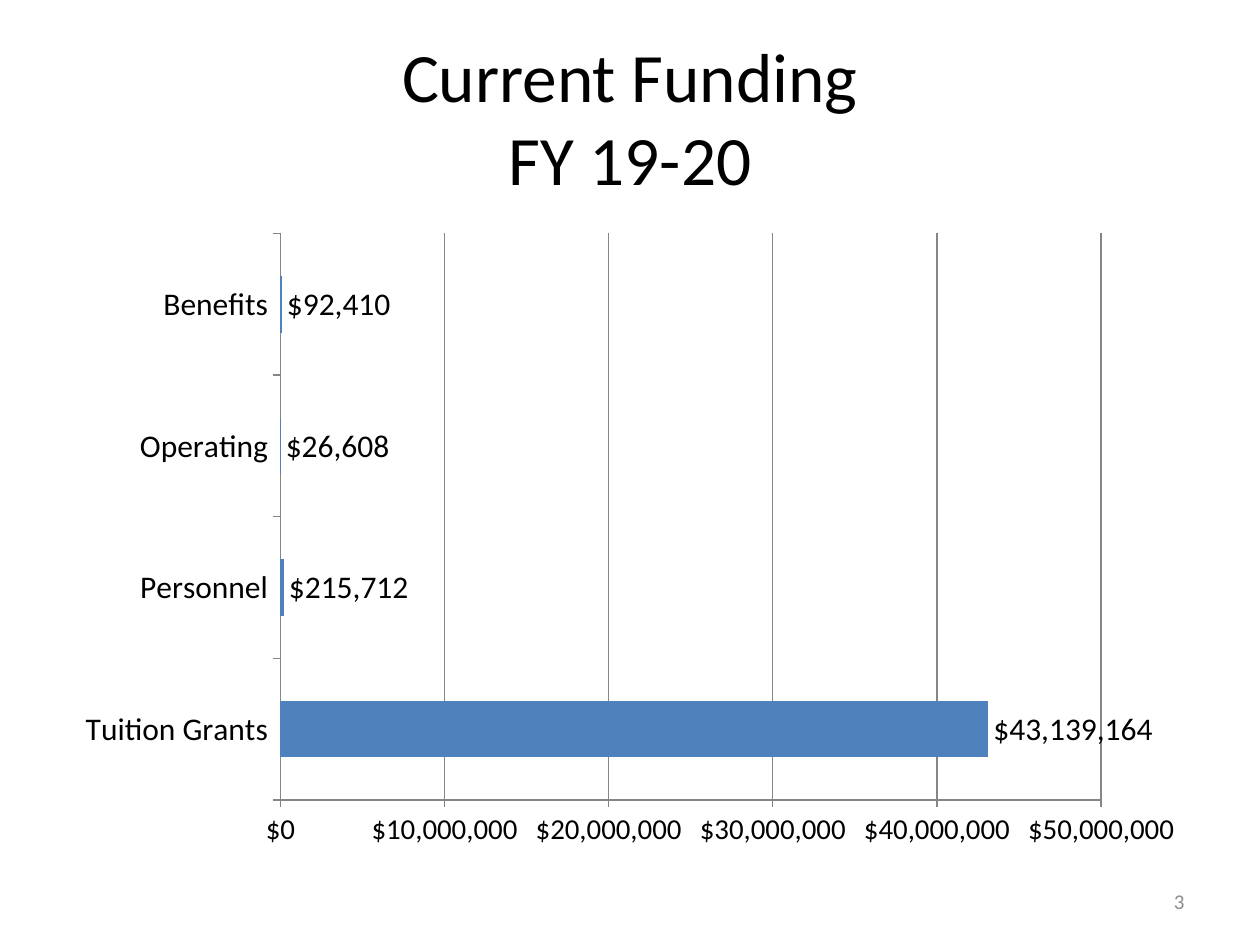
"""Build the current funding slide with a bar chart of budget lines."""
from pptx import Presentation
from pptx.chart.data import CategoryChartData
from pptx.dml.color import RGBColor
from pptx.enum.chart import XL_CHART_TYPE as ChartType
from pptx.enum.chart import XL_LABEL_POSITION as LabelPosition
from pptx.enum.chart import XL_TICK_MARK as TickMark
from pptx.enum.text import MSO_ANCHOR as Anchor
from pptx.enum.text import PP_ALIGN as Align
from pptx.util import Cm, Pt

TITLE = "Current Funding\vFY 19-20"
PAGE_NUMBER = "3"
FUNDING = {
    "Tuition Grants": 43139164,
    "Personnel": 215712,
    "Operating": 26608,
    "Benefits": 92410,
}
DOLLARS = '"$"#,##0'
FONT = "Calibri"
BLACK = RGBColor(0x00, 0x00, 0x00)
GRAY = RGBColor(0x8C, 0x8C, 0x8C)
LINE_GRAY = RGBColor(0x86, 0x86, 0x86)
BLUE = RGBColor(0x4F, 0x81, 0xBD)
MARGIN, WIDTH = Cm(1.27), Cm(22.86)


def style_font(font, size, color):
    font.name = FONT
    font.size = Pt(size)
    font.color.rgb = color


def add_text(page, text, area, size, color, align):
    box = page.shapes.add_textbox(*area)
    frame = box.text_frame
    frame.word_wrap = True
    frame.vertical_anchor = Anchor.MIDDLE
    para = frame.paragraphs[0]
    para.text = text
    para.alignment = align
    style_font(para.font, size, color)


def style_line(line):
    line.color.rgb = LINE_GRAY
    line.width = Pt(0.75)


def add_funding_chart(page):
    data = CategoryChartData(number_format=DOLLARS)
    data.categories = list(FUNDING)
    data.add_series("Series 1", list(FUNDING.values()))
    area = (MARGIN, Cm(4.45), WIDTH, Cm(12.9))
    chart = page.shapes.add_chart(ChartType.BAR_CLUSTERED, *area, data).chart
    chart.has_legend = False
    chart.has_title = False
    style_font(chart.font, 18, BLACK)

    for axis, size in ((chart.category_axis, 18), (chart.value_axis, 16.5)):
        axis.major_tick_mark = TickMark.OUTSIDE
        axis.minor_tick_mark = TickMark.NONE
        style_font(axis.tick_labels.font, size, BLACK)
        style_line(axis.format.line)

    values = chart.value_axis
    values.minimum_scale, values.maximum_scale = 0, 50_000_000
    values.major_unit = 10_000_000
    values.has_major_gridlines = True
    style_line(values.major_gridlines.format.line)
    values.tick_labels.number_format = DOLLARS
    values.tick_labels.number_format_is_linked = False

    plot = chart.plots[0]
    plot.gap_width = 150
    plot.vary_by_categories = False
    fill = plot.series[0].format.fill
    fill.solid()
    fill.fore_color.rgb = BLUE
    labels = plot.series[0].data_labels
    labels.show_value = True
    labels.number_format = DOLLARS
    labels.number_format_is_linked = False
    labels.position = LabelPosition.OUTSIDE_END
    style_font(labels.font, 18, BLACK)


def main():
    deck = Presentation()
    deck.slide_width, deck.slide_height = Cm(25.4), Cm(19.05)
    page = deck.slides.add_slide(deck.slide_layouts[6])
    title_area = (MARGIN, Cm(0.76), WIDTH, Cm(3.18))
    number_area = (Cm(18.2), Cm(17.66), Cm(5.93), Cm(1.01))
    add_text(page, TITLE, title_area, 39.6, BLACK, Align.CENTER)
    add_funding_chart(page)
    add_text(page, PAGE_NUMBER, number_area, 12, GRAY, Align.RIGHT)
    deck.save("out.pptx")


if __name__ == "__main__":
    main()
